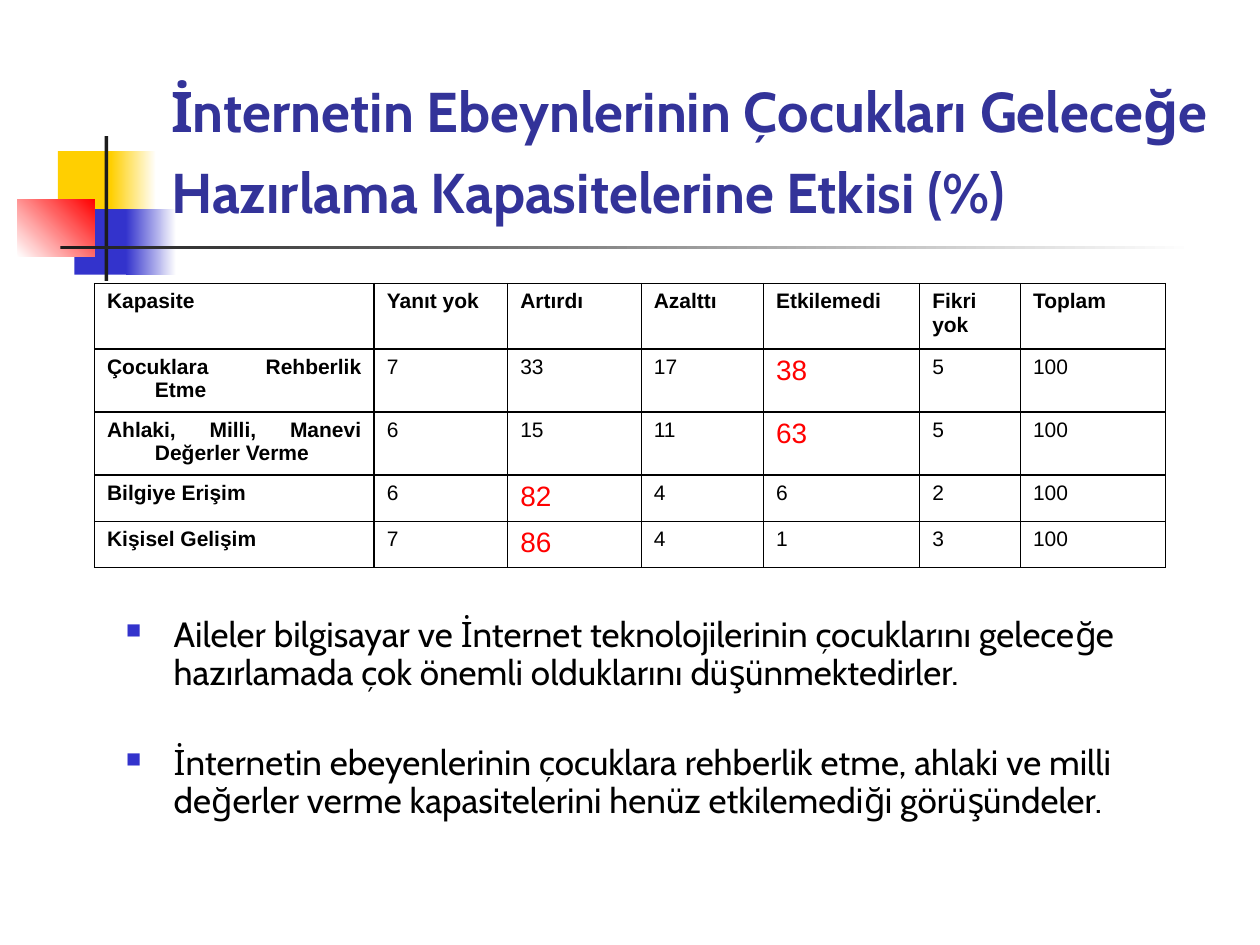
from dataclasses import dataclass

from lxml import etree
from pptx import Presentation
from pptx.dml.color import RGBColor
from pptx.enum.shapes import MSO_SHAPE
from pptx.enum.text import MSO_ANCHOR, PP_ALIGN
from pptx.oxml.ns import qn
from pptx.util import Inches, Pt

RECT = MSO_SHAPE.RECTANGLE
BOTTOM = MSO_ANCHOR.BOTTOM
JUSTIFY = PP_ALIGN.JUSTIFY


@dataclass(frozen=True)
class Theme:
    heading_font: str = "Cabin"
    table_font: str = "Arial"
    title_size: int = 32
    body_size: int = 20
    cell_size: int = 12
    peak_size: int = 16
    title: str = "333399"
    text: str = "000000"
    peak: str = "FF0000"
    yellow: str = "FFCF01"
    blue: str = "3333CC"
    red: str = "FF0000"
    dark: str = "1C1C1C"
    white: str = "FFFFFF"


THEME = Theme()
INDENT = Inches(0.38)

TITLE = ("İnternetin Ebeynlerinin Çocukları Geleceğe "
         "Hazırlama Kapasitelerine Etkisi (%)")
COLUMN_WIDTHS = [2.22, 1.06, 1.06, 0.97, 1.24, 0.8, 1.15]
ROW_HEIGHTS = [0.52, 0.48, 0.48, 0.35, 0.35]
ROWS = [
    ["Kapasite", "Yanıt yok", "Artırdı", "Azalttı", "Etkilemedi", "Fikri\nyok", "Toplam"],
    ["Çocuklara Rehberlik Etme", "7", "33", "17", "38", "5", "100"],
    ["Ahlaki, Milli, Manevi Değerler Verme", "6", "15", "11", "63", "5", "100"],
    ["Bilgiye Erişim", "6", "82", "4", "6", "2", "100"],
    ["Kişisel Gelişim", "7", "86", "4", "1", "3", "100"],
]
PEAK_CELLS = {(1, 4), (2, 4), (3, 2), (4, 2)}
BULLETS = [
    "Aileler bilgisayar ve İnternet teknolojilerinin çocuklarını geleceğe "
    "hazırlamada çok önemli olduklarını düşünmektedirler.",
    "İnternetin ebeyenlerinin çocuklara rehberlik etme, ahlaki ve milli "
    "değerler verme kapasitelerini henüz etkilemediği görüşündeler.",
]


def rgb(value):
    return RGBColor.from_string(value)


def add_run(p, text, font, size, color, bold=False):
    r = p.add_run()
    r.text = text
    r.font.name = font
    r.font.size = Pt(size)
    r.font.bold = bold
    r.font.color.rgb = rgb(color)


def hang(p):
    """Give the paragraph a hanging indent."""
    pPr = p._p.get_or_add_pPr()
    pPr.set("marL", str(INDENT))
    pPr.set("indent", str(-INDENT))
    return pPr


def add_block(slide, box, start, end=None, angle=0):
    """Draw a rectangle, solid or fading from start to end."""
    sp = slide.shapes.add_shape(RECT, *map(Inches, box))
    sp.shadow.inherit = False
    sp.line.fill.background()
    if end is None:
        sp.fill.solid()
        sp.fill.fore_color.rgb = rgb(start)
        return
    sp.fill.gradient()
    sp.fill.gradient_angle = angle
    for stop, color in zip(sp.fill.gradient_stops, (start, end)):
        stop.color.rgb = rgb(color)


def add_ornament(slide, box):
    """Place the coloured blocks, the upright bar and the fading rule."""
    x, y, width, height = box
    t = THEME
    blocks = [
        ((0.32, 0.12, 0.48, 0.52), t.yellow),
        ((0.74, 0.12, 0.36, 0.52), t.yellow, t.white),
        ((0.45, 0.58, 0.46, 0.52), t.blue),
        ((0.86, 0.58, 0.4, 0.52), t.blue, t.white),
        ((0, 0.5, 0.61, 0.46), t.white, t.red, 45),
        ((0.69, 0, 0.03, height), t.dark),
        ((0.34, 0.87, width - 0.34, 0.03), t.dark, t.white),
    ]
    for (dx, dy, w, h), *colors in blocks:
        add_block(slide, (x + dx, y + dy, w, h), *colors)


def add_text_frame(slide, box):
    tf = slide.shapes.add_textbox(*map(Inches, box)).text_frame
    tf.word_wrap = True
    return tf


def add_title(slide, box):
    tf = add_text_frame(slide, box)
    tf.vertical_anchor = BOTTOM
    p = tf.paragraphs[0]
    p.line_spacing = Pt(46)
    add_run(p, TITLE, THEME.heading_font, THEME.title_size, THEME.title, bold=True)


def set_borders(cell):
    tcPr = cell._tc.get_or_add_tcPr()
    for i, side in enumerate(("lnL", "lnR", "lnT", "lnB")):
        ln = etree.Element(qn(f"a:{side}"), w=str(Pt(1)))
        fill = etree.SubElement(ln, qn("a:solidFill"))
        etree.SubElement(fill, qn("a:srgbClr"), val=THEME.text)
        tcPr.insert(i, ln)


def fill_cell(cell, text, bold, peak):
    cell.fill.background()
    set_borders(cell)
    size, color = ((THEME.peak_size, THEME.peak) if peak
                   else (THEME.cell_size, THEME.text))
    tf = cell.text_frame
    for i, line in enumerate(text.split("\n")):
        p = tf.add_paragraph() if i else tf.paragraphs[0]
        p.alignment = JUSTIFY
        hang(p)
        add_run(p, line, THEME.table_font, size, color, bold)


def add_capacity_table(slide, box):
    table = slide.shapes.add_table(len(ROWS), len(COLUMN_WIDTHS),
                                   *map(Inches, box)).table
    table.first_row = table.horz_banding = False
    for column, width in zip(table.columns, COLUMN_WIDTHS):
        column.width = Inches(width)
    for row, height in zip(table.rows, ROW_HEIGHTS):
        row.height = Inches(height)
    for r, values in enumerate(ROWS):
        for c, text in enumerate(values):
            fill_cell(table.cell(r, c), text, bold=r == 0 or c == 0,
                      peak=(r, c) in PEAK_CELLS)


def add_bullets(slide, box):
    tf = add_text_frame(slide, box)
    for i, text in enumerate(BULLETS):
        p = tf.add_paragraph() if i else tf.paragraphs[0]
        p.line_spacing = 0.9
        p.space_before = Pt(30 if i else 0)
        pPr = hang(p)
        color = etree.SubElement(pPr, qn("a:buClr"))
        etree.SubElement(color, qn("a:srgbClr"), val=THEME.blue)
        etree.SubElement(pPr, qn("a:buSzPct"), val="60000")
        etree.SubElement(pPr, qn("a:buChar"), char="■")
        add_run(p, text, THEME.heading_font, THEME.body_size, THEME.text)


def main():
    prs = Presentation()
    prs.slide_width, prs.slide_height = Inches(10), Inches(7.5)
    slide = prs.slides.add_slide(prs.slide_layouts[6])
    add_ornament(slide, (0.14, 1.08, 9.34, 1.15))
    add_title(slide, (1.26, 0.23, 8.52, 1.6))
    add_capacity_table(slide, (0.75, 2.25, sum(COLUMN_WIDTHS), sum(ROW_HEIGHTS)))
    add_bullets(slide, (0.9, 4.85, 8.5, 2.17))
    prs.save("out.pptx")


if __name__ == "__main__":
    main()
